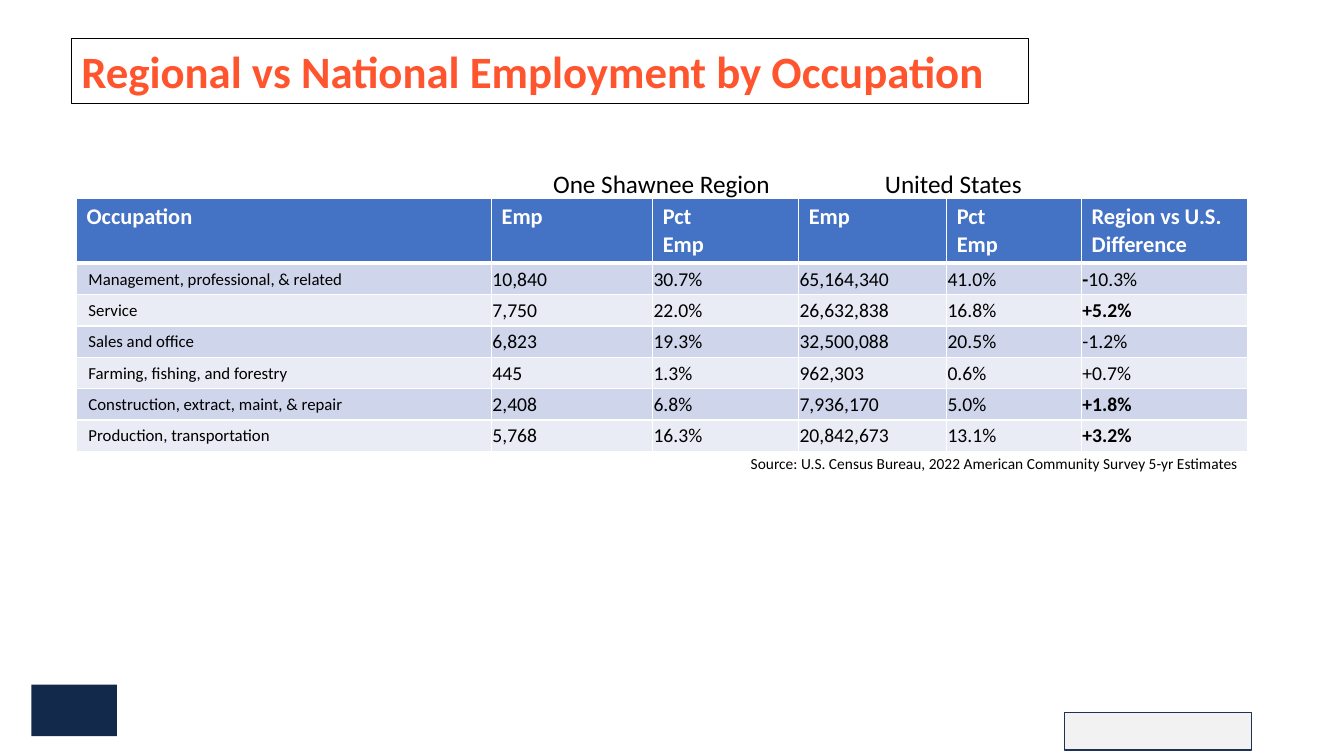
from lxml import etree
from pptx import Presentation
from pptx.dml.color import RGBColor
from pptx.enum.shapes import MSO_SHAPE
from pptx.enum.text import MSO_ANCHOR
from pptx.oxml.ns import qn
from pptx.util import Cm, Pt

RECT = MSO_SHAPE.RECTANGLE
TOP, MIDDLE = MSO_ANCHOR.TOP, MSO_ANCHOR.MIDDLE
BLACK = RGBColor(0x00, 0x00, 0x00)
WHITE = RGBColor(0xFF, 0xFF, 0xFF)
ORANGE = RGBColor(0xFF, 0x55, 0x2E)
NAVY = RGBColor(0x13, 0x29, 0x4B)
INDIGO = RGBColor(0x1E, 0x32, 0x56)
GREY = RGBColor(0xF2, 0xF2, 0xF2)
BLUE = RGBColor(0x44, 0x72, 0xC4)
BANDS = RGBColor(0xCF, 0xD5, 0xEA), RGBColor(0xE9, 0xEB, 0xF5)

WIDTHS = [10.46, 4.06, 3.68, 3.73, 3.4, 4.19]
HEADER = ["Occupation", "Emp", "Pct\nEmp", "Emp", "Pct\nEmp",
          "Region vs U.S. Difference"]
JOBS = [
    ["Management, professional, & related", "10,840", "30.7%",
     "65,164,340", "41.0%", "*-*10.3%"],
    ["Service", "7,750", "22.0%", "26,632,838", "16.8%", "*+5.2%*"],
    ["Sales and office", "6,823", "19.3%", "32,500,088", "20.5%", "-1.2%"],
    ["Farming, fishing, and forestry", "445", "1.3%", "962,303", "0.6%",
     "+0.7%"],
    ["Construction, extract, maint, & repair", "2,408", "6.8%",
     "7,936,170", "5.0%", "*+1.8%*"],
    ["Production, transportation", "5,768", "16.3%", "20,842,673", "13.1%",
     "*+3.2%*"],
]


def write(frame, text, size=18, color=BLACK, bold=False, font="Calibri"):
    for i, line in enumerate(text.split("\n")):
        para = frame.add_paragraph() if i else frame.paragraphs[0]
        for j, part in enumerate(line.split("*")):
            if part:
                run = para.add_run()
                run.text = part
                run.font.name = font
                run.font.size = Pt(size)
                run.font.bold = bold or j % 2 == 1
                run.font.color.rgb = color


class Board:
    def __init__(self, slide):
        self.slide = slide

    def block(self, box, fill, line=None):
        shape = self.slide.shapes.add_shape(RECT, *map(Cm, box))
        shape.shadow.inherit = False
        shape.fill.solid()
        shape.fill.fore_color.rgb = fill
        if line is None:
            shape.line.fill.background()
        else:
            shape.line.color.rgb = line
            shape.line.width = Pt(1)

    def label(self, box, text, line=None, **style):
        shape = self.slide.shapes.add_textbox(*map(Cm, box))
        shape.text_frame.word_wrap = True
        if line is not None:
            shape.line.color.rgb = line
            shape.line.width = Pt(0.75)
        write(shape.text_frame, text, **style)

    def edge(self, cell, base):
        props = cell._tc.get_or_add_tcPr()
        for i, side in enumerate("LRTB"):
            width = base if side == "B" else 1
            line = etree.Element(qn(f"a:ln{side}"), w=str(Pt(width)))
            fill = etree.SubElement(line, qn("a:solidFill"))
            etree.SubElement(fill, qn("a:srgbClr"), val=str(WHITE))
            props.insert(i, line)

    def cell(self, cell, text, fill, base=1, anchor=TOP, pad=None, **style):
        cell.fill.solid()
        cell.fill.fore_color.rgb = fill
        cell.vertical_anchor = anchor
        if pad is not None:
            cell.margin_left = Cm(pad)
            cell.margin_right = cell.margin_top = Cm(0.02)
            cell.margin_bottom = 0
        write(cell.text_frame, text, **style)
        self.edge(cell, base)

    def table(self, left, top, head, row):
        high = head + row * len(JOBS)
        grid = self.slide.shapes.add_table(
            len(JOBS) + 1, len(WIDTHS), Cm(left), Cm(top),
            Cm(sum(WIDTHS)), Cm(high)).table
        for col, width in zip(grid.columns, WIDTHS):
            col.width = Cm(width)
        for i, line in enumerate(grid.rows):
            line.height = Cm(row if i else head)
        for c, text in enumerate(HEADER):
            self.cell(grid.cell(0, c), text, BLUE, base=3,
                      size=16, color=WHITE, bold=True)
        for r, job in enumerate(JOBS):
            for c, text in enumerate(job):
                self.cell(grid.cell(r + 1, c), text, BANDS[r % 2],
                          anchor=MIDDLE, pad=0.02 if c else 0.3,
                          size=14 if c else 12)


def main():
    deck = Presentation()
    deck.slide_width, deck.slide_height = Cm(33.87), Cm(19.05)
    board = Board(deck.slides.add_slide(deck.slide_layouts[6]))
    board.block((26.82, 17.96, 4.72, 0.94), GREY, INDIGO)
    board.block((0.79, 17.25, 2.16, 1.3), NAVY)
    board.table(1.93, 5, 1.63, 0.79)
    board.label((13.69, 4.12, 6.17, 1.02), "One Shawnee Region")
    board.label((22.05, 4.12, 5.05, 1.02), "United States")
    board.label((18.67, 11.33, 12.88, 0.74),
                "Source: U.S. Census Bureau, 2022 American Community Survey "
                "5-yr Estimates", size=11)
    board.label((1.8, 0.97, 24.13, 1.63),
                "Regional vs National Employment by Occupation",
                line=BLACK, size=32, color=ORANGE, bold=True)
    deck.save("out.pptx")


if __name__ == "__main__":
    main()
